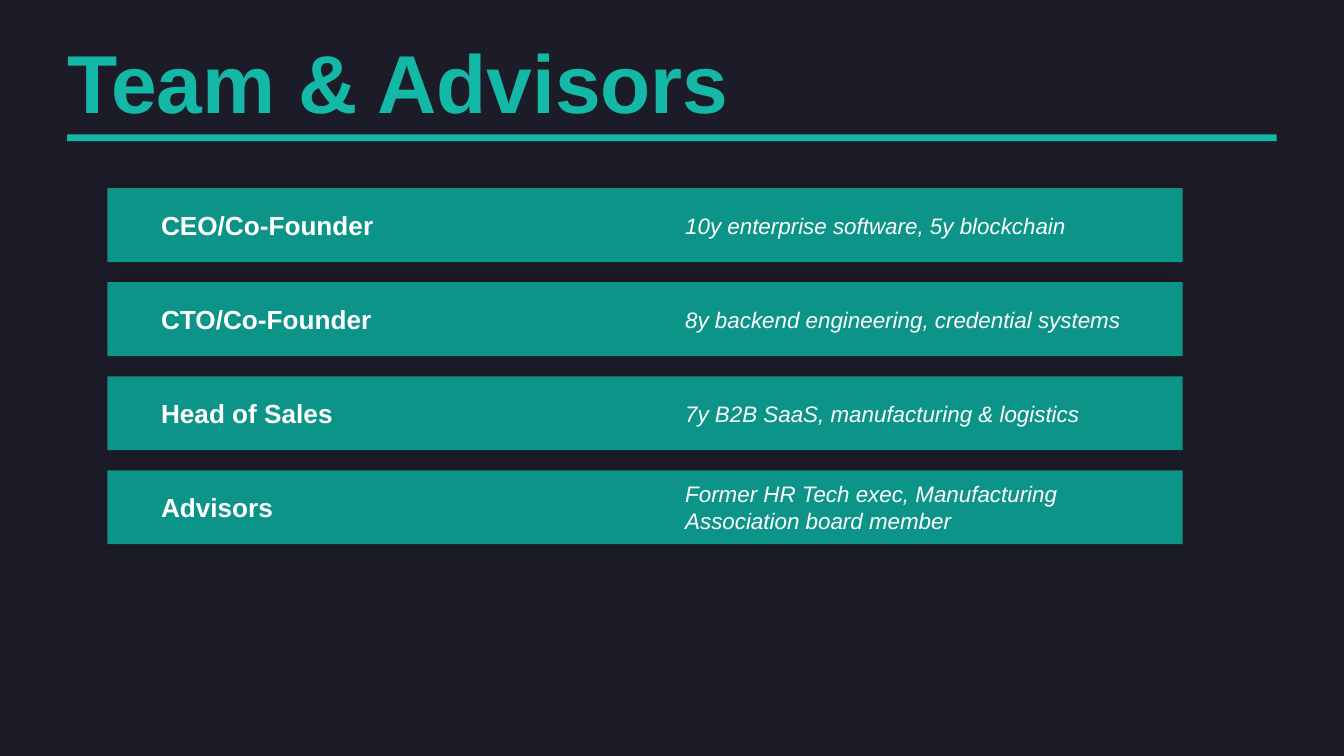
from dataclasses import dataclass

from lxml.etree import SubElement
from pptx import Presentation
from pptx.dml.color import RGBColor
from pptx.enum.shapes import MSO_SHAPE as SHAPE
from pptx.enum.text import MSO_ANCHOR as ANCHOR
from pptx.oxml.ns import qn
from pptx.util import Pt

PX = 4572  # EMU per px, 200 px to the inch


@dataclass(frozen=True)
class Theme:
    font: str = "Arial"
    background: str = "1C1C28"
    accent: str = "14B8A6"
    card: str = "0D9488"
    text: str = "FFFFFF"
    shadow: str = "000000"
    title_size: int = 44
    role_size: int = 14
    detail_size: int = 12


class SlideBuilder:
    def __init__(self, slide, theme):
        self.slide = slide
        self.theme = theme
        fill = slide.background.fill
        fill.solid()
        fill.fore_color.rgb = RGBColor.from_string(theme.background)

    def rect(self, x, y, w, h, color):
        sp = self.slide.shapes.add_shape(SHAPE.RECTANGLE, *(v * PX for v in (x, y, w, h)))
        sp.shadow.inherit = False
        sp.fill.solid()
        sp.fill.fore_color.rgb = RGBColor.from_string(color)
        sp.line.fill.background()
        return sp

    def card(self, x, y, w, h):
        """Draw a rectangle with a soft shadow cast upwards."""
        sp = self.rect(x, y, w, h, self.theme.card)
        effects = sp._element.spPr.find(qn("a:effectLst"))
        shadow = SubElement(effects, qn("a:outerShdw"), blurRad=str(Pt(6)), dist=str(Pt(2)),
                            dir=str(270 * 60000), algn="bl", rotWithShape="0")
        color = SubElement(shadow, qn("a:srgbClr"), val=self.theme.shadow)
        SubElement(color, qn("a:alpha"), val="15000")

    def text(self, x, y, w, h, text, color, size, inset=20, **style):
        box = self.slide.shapes.add_textbox(*(v * PX for v in (x, y, w, h)))
        tf = box.text_frame
        frame = {"word_wrap": True, "vertical_anchor": ANCHOR.MIDDLE,
                 "margin_left": inset * PX, "margin_right": inset * PX,
                 "margin_top": inset // 2 * PX, "margin_bottom": inset // 2 * PX}
        for name, value in frame.items():
            setattr(tf, name, value)
        r = tf.paragraphs[0].add_run()
        r.text = text
        for name, value in {"name": self.theme.font, "size": Pt(size), **style}.items():
            setattr(r.font, name, value)
        r.font.color.rgb = RGBColor.from_string(color)


TEAM = [
    ("CEO/Co-Founder", "10y enterprise software, 5y blockchain"),
    ("CTO/Co-Founder", "8y backend engineering, credential systems"),
    ("Head of Sales", "7y B2B SaaS, manufacturing & logistics"),
    ("Advisors", "Former HR Tech exec, Manufacturing Association board member"),
]
CARD_TOP, CARD_STEP, CARD_HEIGHT, CARD_PAD = 280, 140, 110, 10


def main():
    prs = Presentation()
    prs.slide_width, prs.slide_height = 2000 * PX, 1125 * PX
    theme = Theme()
    s = SlideBuilder(prs.slides.add_slide(prs.slide_layouts[6]), theme)

    s.text(100, 60, 1800, 120, "Team & Advisors", theme.accent, theme.title_size,
           inset=0, bold=True)
    s.rect(100, 200, 1800, 10, theme.accent)

    for i, (role, detail) in enumerate(TEAM):
        y = CARD_TOP + i * CARD_STEP
        text_y, text_h = y + CARD_PAD, CARD_HEIGHT - 2 * CARD_PAD
        s.card(160, y, 1600, CARD_HEIGHT)
        s.text(220, text_y, 700, text_h, role, theme.text, theme.role_size, bold=True)
        s.text(1000, text_y, 720, text_h, detail, theme.text, theme.detail_size, italic=True)

    prs.save("out.pptx")


if __name__ == "__main__":
    main()
